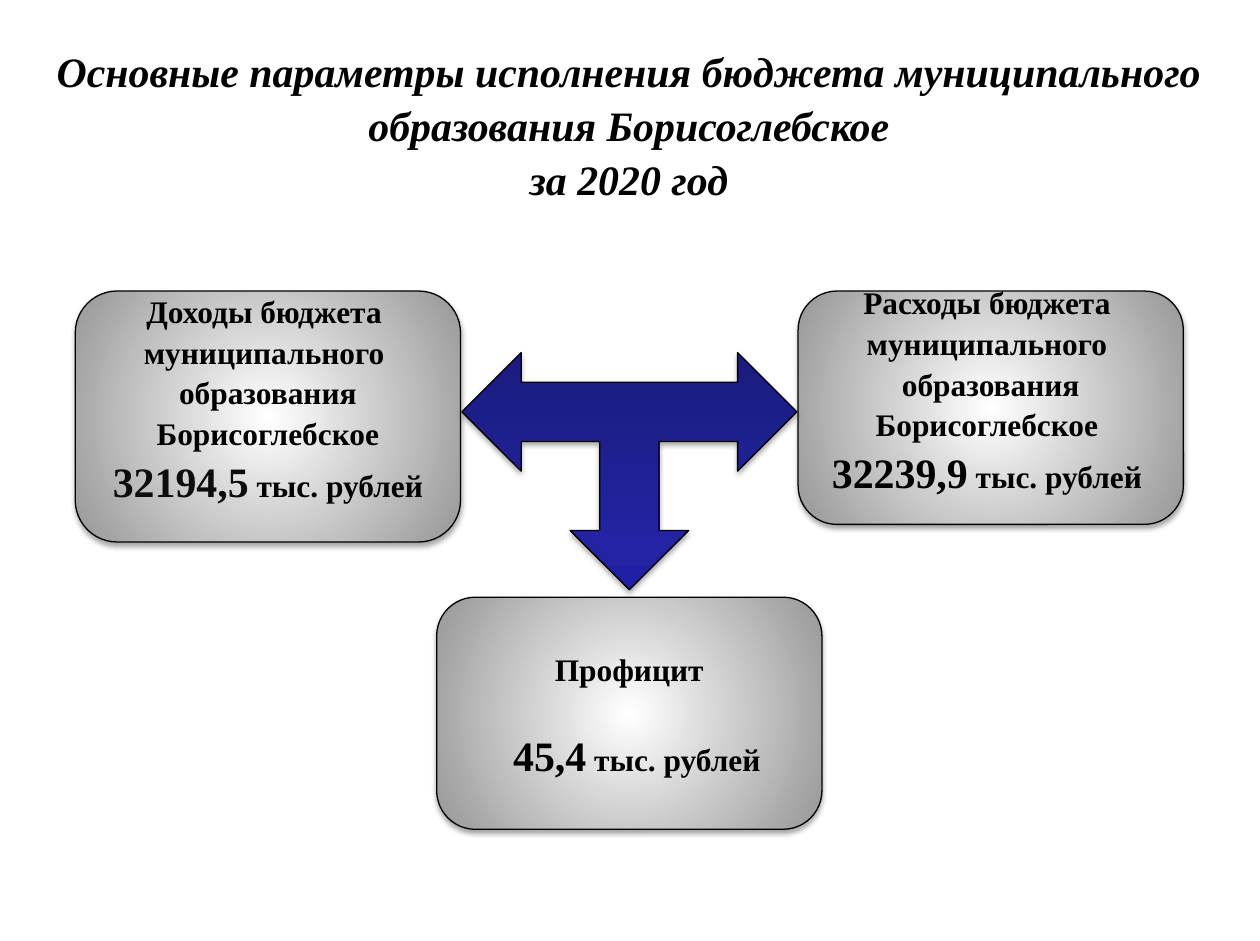
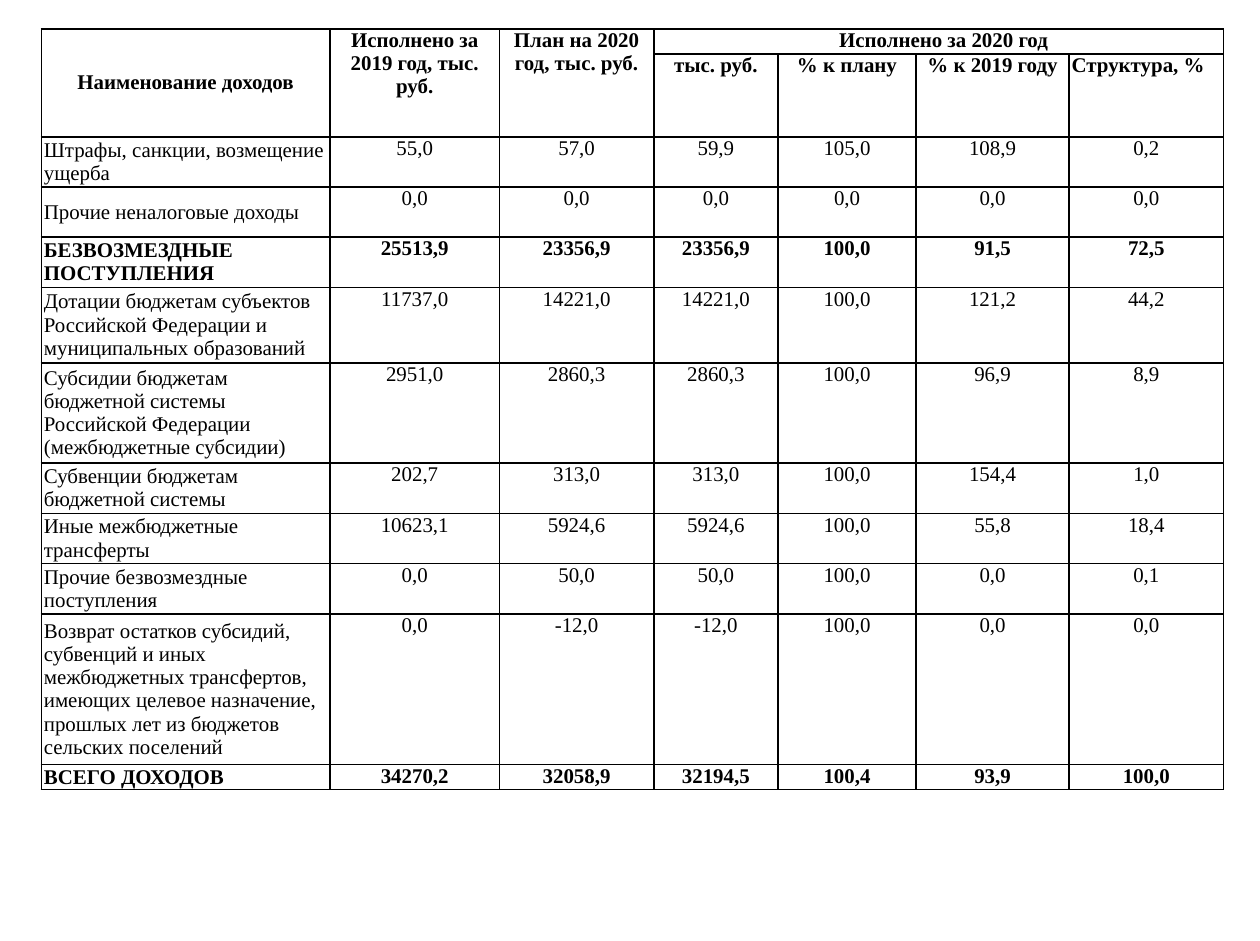
import pptx
import pptx.util
import pptx.dml.color
import pptx.enum.shapes
import pptx.enum.text
import pptx.oxml
import pptx.oxml.ns

Inches, Pt = pptx.util.Inches, pptx.util.Pt
ALIGN = pptx.enum.text.PP_ALIGN
ANCHOR = pptx.enum.text.MSO_ANCHOR
SHAPE = pptx.enum.shapes.MSO_SHAPE
NS = pptx.oxml.ns.nsdecls("a")

COLORS = {
    "text": "000000", "amount": "0D0D0D", "line": "000000",
    "box_center": "FFFFFF", "box_edge": "979797", "cell": "FFFFFF",
    "arrow_dark": "1B1B7E", "arrow_mid": "2323A3", "arrow_light": "2020A6",
}
RADIAL = ('<a:path path="circle"><a:fillToRect l="50000" t="50000" '
          'r="50000" b="50000"/></a:path>')
UPWARD = '<a:lin ang="16200000" scaled="0"/>'


def rgb(name):
    return pptx.dml.color.RGBColor.from_string(COLORS[name])


class Deck:
    font = "Times New Roman"
    spacing = 1.08
    space_width = 0.06

    def __init__(self, width, height):
        self.prs = pptx.Presentation()
        self.prs.slide_width, self.prs.slide_height = Inches(width), Inches(height)
        self.s = None

    def slide(self):
        self.s = self.prs.slides.add_slide(self.prs.slide_layouts[6])

    def run(self, p, text, size, bold=True, italic=False, color="text"):
        r = p.add_run()
        r.text = text
        f = r.font
        f.name, f.size, f.bold, f.italic = self.font, Pt(size), bold, italic
        f.color.rgb = rgb(color)

    def paragraph(self, tf, index, nudge=0):
        """Centred paragraph, indented by nudge spaces (negative: from the right)."""
        p = tf.add_paragraph() if index else tf.paragraphs[0]
        p.alignment = ALIGN.CENTER
        p.line_spacing = self.spacing
        if nudge:
            side = "marL" if nudge > 0 else "marR"
            p._p.get_or_add_pPr().set(side, str(Inches(abs(nudge) * self.space_width)))
        return p

    def title(self, lines):
        tf = self.s.shapes.add_textbox(
            Inches(-0.01), Inches(0.28), Inches(10.04), Inches(1.31)).text_frame
        tf.word_wrap = True
        for i, line in enumerate(lines):
            self.run(self.paragraph(tf, i), line, 24, italic=True)

    def shaded(self, kind, at, stops, direction):
        """Outlined shape with a gradient and a soft shadow below."""
        sp = self.s.shapes.add_shape(kind, *map(Inches, at))
        marks = "".join(f'<a:gs pos="{pos * 1000}"><a:srgbClr val="{COLORS[c]}"/></a:gs>'
                        for pos, c in stops)
        sp._element.spPr.insert(2, pptx.oxml.parse_xml(
            f'<a:gradFill {NS} rotWithShape="1"><a:gsLst>{marks}</a:gsLst>'
            f'{direction}</a:gradFill>'))
        sp.line.color.rgb = rgb("line")
        sp.line.width = Pt(0.75)
        sp.shadow.inherit = False
        effects = sp._element.spPr.find(pptx.oxml.ns.qn("a:effectLst"))
        effects.append(pptx.oxml.parse_xml(
            f'<a:outerShdw {NS} blurRad="{Pt(3.1)}" dist="{Pt(1.8)}" dir="5400000" '
            'rotWithShape="0"><a:srgbClr val="000000"><a:alpha val="35000"/>'
            '</a:srgbClr></a:outerShdw>'))
        return sp

    def budget_box(self, at, lines, amount, nudge=0, color="text", gap=0, bottom=0):
        """Box of (text, nudge) lines closed by an amount in thousands of roubles."""
        sp = self.shaded(SHAPE.ROUNDED_RECTANGLE, at,
                         [(0, "box_center"), (100, "box_edge")], RADIAL)
        tf = sp.text_frame
        tf.word_wrap = True
        tf.vertical_anchor = ANCHOR.MIDDLE
        tf.margin_top, tf.margin_bottom = 0, Inches(bottom)
        for i, (text, shift) in enumerate(lines):
            self.run(self.paragraph(tf, i, shift), text, 18)
        p = self.paragraph(tf, len(lines), nudge)
        if gap:
            p.space_before = Pt(gap)
        self.run(p, amount, 24, color=color)
        self.run(p, " тыс. рублей", 18)

    def arrow(self, at):
        sp = self.shaded(SHAPE.LEFT_RIGHT_UP_ARROW, at,
                         [(0, "arrow_dark"), (80, "arrow_mid"), (100, "arrow_light")],
                         UPWARD)
        sp.rotation = 180

    def cell(self, cell, text, bold, align=ALIGN.CENTER, anchor=ANCHOR.TOP):
        cell.margin_left = cell.margin_right = Inches(0.02)
        cell.margin_top = cell.margin_bottom = 0
        cell.vertical_anchor = anchor
        cell.fill.solid()
        cell.fill.fore_color.rgb = rgb("cell")
        for i, side in enumerate("LRTB"):
            cell._tc.get_or_add_tcPr().insert(i, pptx.oxml.parse_xml(
                f'<a:ln{side} {NS} w="{Pt(1)}"><a:solidFill>'
                f'<a:srgbClr val="{COLORS["line"]}"/></a:solidFill></a:ln{side}>'))
        p = cell.text_frame.paragraphs[0]
        p.alignment = align
        if text:
            self.run(p, text, 12, bold)
        else:
            p.font.size = Pt(12)

    def table(self, at, widths, heights, header, rows, merges):
        """Table whose rows named in capitals are bold, like the header."""
        t = self.s.shapes.add_table(len(heights), len(widths), *map(Inches, at)).table
        for col, width in zip(t.columns, widths):
            col.width = Inches(width)
        for row, height in zip(t.rows, heights):
            row.height = Inches(height)
        for i, texts in enumerate(header + rows):
            is_header = i < len(header)
            for j, text in enumerate(texts):
                left = j == 0 and not is_header or text == "Структура, %"
                self.cell(t.cell(i, j), text, is_header or texts[0].isupper(),
                          ALIGN.LEFT if left else ALIGN.CENTER,
                          ANCHOR.TOP if j else ANCHOR.MIDDLE)
        for first, last in merges:
            t.cell(*first).merge(t.cell(*last))
        return t


HEADER = [
    ["Наименование доходов", "Исполнено за 2019 год, тыс. руб.",
     "План на 2020 год, тыс. руб.", "Исполнено за 2020 год", "", "", ""],
    ["", "", "", "тыс. руб.", "% к плану", "% к 2019 году", "Структура, %"],
]
INCOME = [
    ["Штрафы, санкции, возмещение ущерба",
     "55,0", "57,0", "59,9", "105,0", "108,9", "0,2"],
    ["Прочие неналоговые доходы", "0,0", "0,0", "0,0", "0,0", "0,0", "0,0"],
    ["БЕЗВОЗМЕЗДНЫЕ ПОСТУПЛЕНИЯ",
     "25513,9", "23356,9", "23356,9", "100,0", "91,5", "72,5"],
    ["Дотации бюджетам субъектов Российской Федерации и муниципальных образований",
     "11737,0", "14221,0", "14221,0", "100,0", "121,2", "44,2"],
    ["Субсидии бюджетам бюджетной системы Российской Федерации "
     "(межбюджетные субсидии)",
     "2951,0", "2860,3", "2860,3", "100,0", "96,9", "8,9"],
    ["Субвенции бюджетам бюджетной системы",
     "202,7", "313,0", "313,0", "100,0", "154,4", "1,0"],
    ["Иные межбюджетные трансферты",
     "10623,1", "5924,6", "5924,6", "100,0", "55,8", "18,4"],
    ["Прочие безвозмездные поступления",
     "0,0", "50,0", "50,0", "100,0", "0,0", "0,1"],
    ["Возврат остатков субсидий, субвенций и иных межбюджетных трансфертов, "
     "имеющих целевое назначение, прошлых лет из бюджетов сельских поселений",
     "0,0", "-12,0", "-12,0", "100,0", "0,0", "0,0"],
    ["ВСЕГО ДОХОДОВ", "34270,2", "32058,9", "32194,5", "100,4", "93,9", "100,0"],
]


def budget_slide(deck):
    deck.slide()
    deck.title(["Основные параметры исполнения бюджета муниципального "
                "образования Борисоглебское", "за 2020 год"])
    deck.budget_box((6.36, 2.32, 3.07, 1.86),
                    [("Расходы бюджета", -1), ("муниципального", 0),
                     ("образования", 1), ("Борисоглебское", 0)],
                    "32239,9", bottom=0.3)
    deck.budget_box((0.6, 2.32, 3.07, 2),
                    [("Доходы бюджета", -1), ("муниципального", 0),
                     ("образования", 1), ("Борисоглебское", 1)],
                    "32194,5", nudge=1, color="amount", bottom=0.3)
    deck.arrow((3.68, 2.81, 2.67, 1.89))
    deck.budget_box((3.48, 4.76, 3.07, 1.85), [("Профицит", 0)],
                    "45,4", nudge=2, gap=21.5)


def income_slide(deck):
    deck.slide()
    t = deck.table((0.33, 0.23, 9.41, 6.06),
                   [2.3, 1.35, 1.23, 0.99, 1.1, 1.22, 1.23],
                   [0.2, 0.66, 0.4, 0.4, 0.4, 0.6, 0.8, 0.4, 0.4, 0.4, 1.2, 0.2],
                   HEADER, INCOME,
                   [((0, j), (1, j)) for j in range(3)] + [((0, 3), (0, 6))])
    year = t.cell(0, 3).text_frame.paragraphs[0]
    year._p.get_or_add_pPr().set("indent", str(Inches(0.08)))


def main():
    deck = Deck(10.04, 7.5)
    budget_slide(deck)
    income_slide(deck)
    deck.prs.save("out.pptx")


if __name__ == "__main__":
    main()
